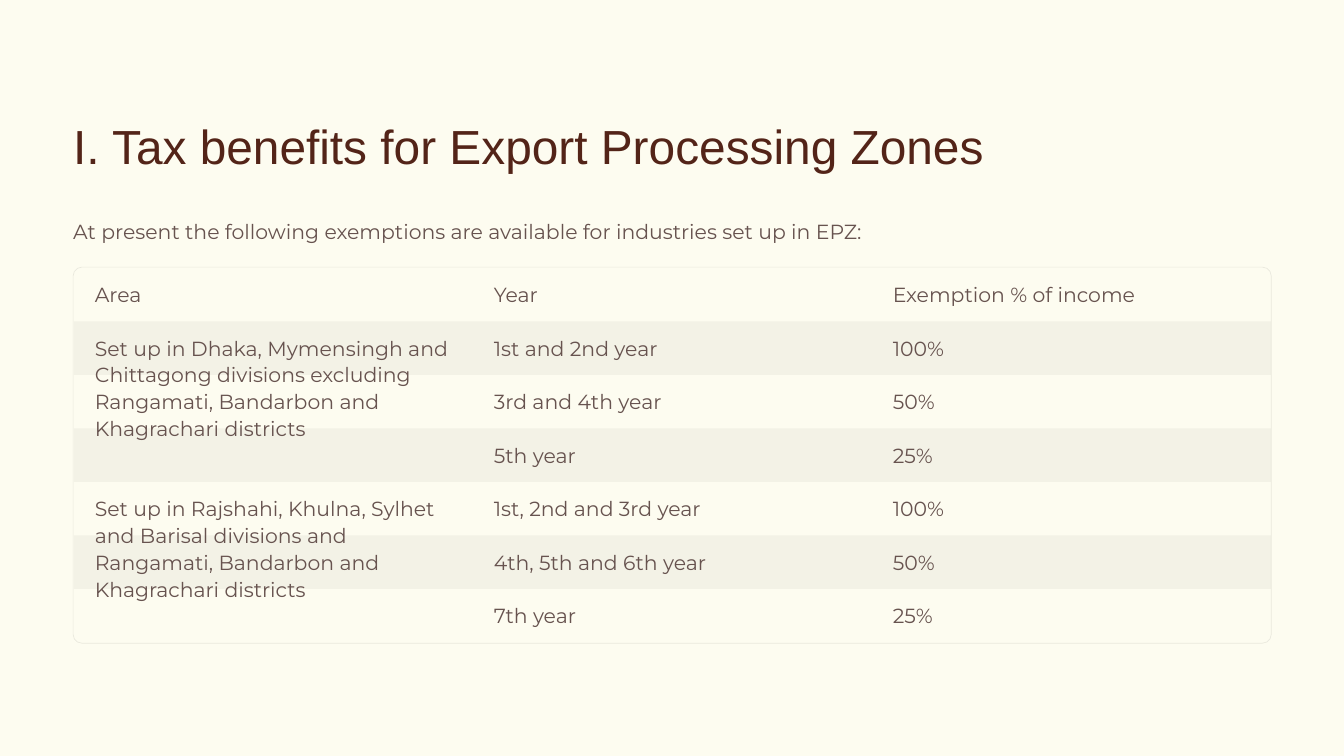
"""Builds the slide on tax benefits for Export Processing Zones."""
from dataclasses import dataclass

from lxml import etree
from pptx import Presentation
from pptx.dml.color import RGBColor
from pptx.enum import shapes, text
from pptx.oxml import ns
from pptx.util import Pt

TITLE = "I. Tax benefits for Export Processing Zones"
INTRO = "At present the following exemptions are available for industries set up in EPZ:"
HEADER = ("Area", "Year", "Exemption % of income")
ZONES = [
    ("Set up in Dhaka, Mymensingh and Chittagong divisions excluding "
     "Rangamati, Bandarbon and Khagrachari districts",
     [("1st and 2nd year", "100%"), ("3rd and 4th year", "50%"), ("5th year", "25%")]),
    ("Set up in Rajshahi, Khulna, Sylhet and Barisal divisions and "
     "Rangamati, Bandarbon and Khagrachari districts",
     [("1st, 2nd and 3rd year", "100%"), ("4th, 5th and 6th year", "50%"),
      ("7th year", "25%")]),
]


@dataclass(frozen=True)
class Theme:
    """Colours, fonts and type sizes."""
    paper: str = "FDFCF0"
    heading: str = "532418"
    body: str = "67534F"
    light: str = "FFFFFF"
    dark: str = "000000"
    heading_font: str = "Arial"
    body_font: str = "Montserrat"
    heading_size: float = 41
    body_size: float = 17.5
    heading_line: float = 53
    body_line: float = 23
    band_alpha: int = 4
    frame_alpha: int = 8


THEME = Theme()
NO_GRID_STYLE = "{2D5ABB26-0587-4C30-8999-92F81FD0307C}"
LEFT, WIDTH = 62.7, 1026.9
TABLE_LEFT, TABLE_TOP = 63.3, 229.6
COLUMN_WIDTH, ROW_HEIGHT = 342, 45.87
PAD_X, PAD_Y = 18, 11.2


def write(frame, words, *, font=THEME.body_font, size=THEME.body_size,
          color=THEME.body, line=THEME.body_line):
    """Put formatted text in a text frame."""
    frame.word_wrap = True
    para = frame.paragraphs[0]
    para.alignment = text.PP_ALIGN.LEFT
    para.line_spacing = Pt(line)
    span = para.add_run()
    span.text = words
    span.font.name = font
    span.font.size = Pt(size)
    span.font.color.rgb = RGBColor.from_string(color)


def place(box, left, top, width, height):
    """Position a text shape and clear its insets."""
    box.left, box.top, box.width, box.height = map(Pt, (left, top, width, height))
    frame = box.text_frame
    frame.auto_size = text.MSO_AUTO_SIZE.NONE
    frame.vertical_anchor = text.MSO_ANCHOR.TOP
    frame.margin_left = frame.margin_right = 0
    frame.margin_top = frame.margin_bottom = 0
    return frame


def tint(fill, owner, color, alpha):
    """Give a fill a solid colour with an opacity in percent."""
    fill.solid()
    fill.fore_color.rgb = RGBColor.from_string(color)
    value = next(owner.iter(ns.qn("a:srgbClr")))
    etree.SubElement(value, ns.qn("a:alpha")).set("val", str(alpha * 1000))


def add_panel(page, kind, left, top, width, height):
    """Add a preset shape without a shadow."""
    panel = page.shapes.add_shape(kind, *map(Pt, (left, top, width, height)))
    panel.shadow.inherit = False
    return panel


def add_frame(page, row_count):
    """Draw the rounded outline and the row bands."""
    outline = add_panel(page, shapes.MSO_SHAPE.ROUNDED_RECTANGLE,
                        LEFT, TABLE_TOP - 0.6, WIDTH, row_count * ROW_HEIGHT + 1.2)
    outline.adjustments[0] = 0.023
    outline.fill.background()
    outline.line.width = Pt(0.6)
    tint(outline.line.fill, outline.line._get_or_add_ln(), THEME.dark, THEME.frame_alpha)
    for row in range(row_count):
        band = add_panel(page, shapes.MSO_SHAPE.RECTANGLE, TABLE_LEFT,
                         TABLE_TOP + row * ROW_HEIGHT, 3 * COLUMN_WIDTH, ROW_HEIGHT)
        band.line.fill.background()
        color = THEME.dark if row % 2 else THEME.light
        tint(band.fill, band._element.spPr, color, THEME.band_alpha)


def add_exemptions(page, rows):
    """Add the table, with each zone's area cell merged over its years."""
    size = (len(HEADER) * COLUMN_WIDTH, len(rows) * ROW_HEIGHT)
    table = page.shapes.add_table(len(rows), len(HEADER),
                                  *map(Pt, (TABLE_LEFT, TABLE_TOP, *size))).table
    table.first_row = table.horz_banding = False
    next(table._tbl.iter(ns.qn("a:tableStyleId"))).text = NO_GRID_STYLE
    for column in table.columns:
        column.width = Pt(COLUMN_WIDTH)
    for index, values in enumerate(rows):
        table.rows[index].height = Pt(ROW_HEIGHT)
        for column, words in enumerate(values):
            cell = table.cell(index, column)
            cell.fill.background()
            cell.margin_left = cell.margin_right = Pt(PAD_X)
            cell.margin_top = cell.margin_bottom = Pt(PAD_Y)
            cell.vertical_anchor = text.MSO_ANCHOR.TOP
            if words:
                write(cell.text_frame, words)
    start = 1
    for _, years in ZONES:
        end = start + len(years)
        table.cell(start, 0).merge(table.cell(end - 1, 0))
        start = end


def main():
    """Build and save the deck."""
    deck = Presentation()
    deck.slide_width, deck.slide_height = Pt(1152), Pt(648)
    page = deck.slides.add_slide(deck.slide_layouts[5])
    page.background.fill.solid()
    page.background.fill.fore_color.rgb = RGBColor.from_string(THEME.paper)

    write(place(page.shapes.title, LEFT, 96.5, 842, 53), TITLE,
          font=THEME.heading_font, size=THEME.heading_size,
          color=THEME.heading, line=THEME.heading_line)
    intro = page.shapes.add_textbox(0, 0, 0, 0)
    write(place(intro, LEFT, 186, WIDTH, 23), INTRO)

    rows = [HEADER]
    for area, years in ZONES:
        rows += [("" if index else area, *year) for index, year in enumerate(years)]
    add_frame(page, len(rows))
    add_exemptions(page, rows)
    deck.save("out.pptx")


if __name__ == "__main__":
    main()
